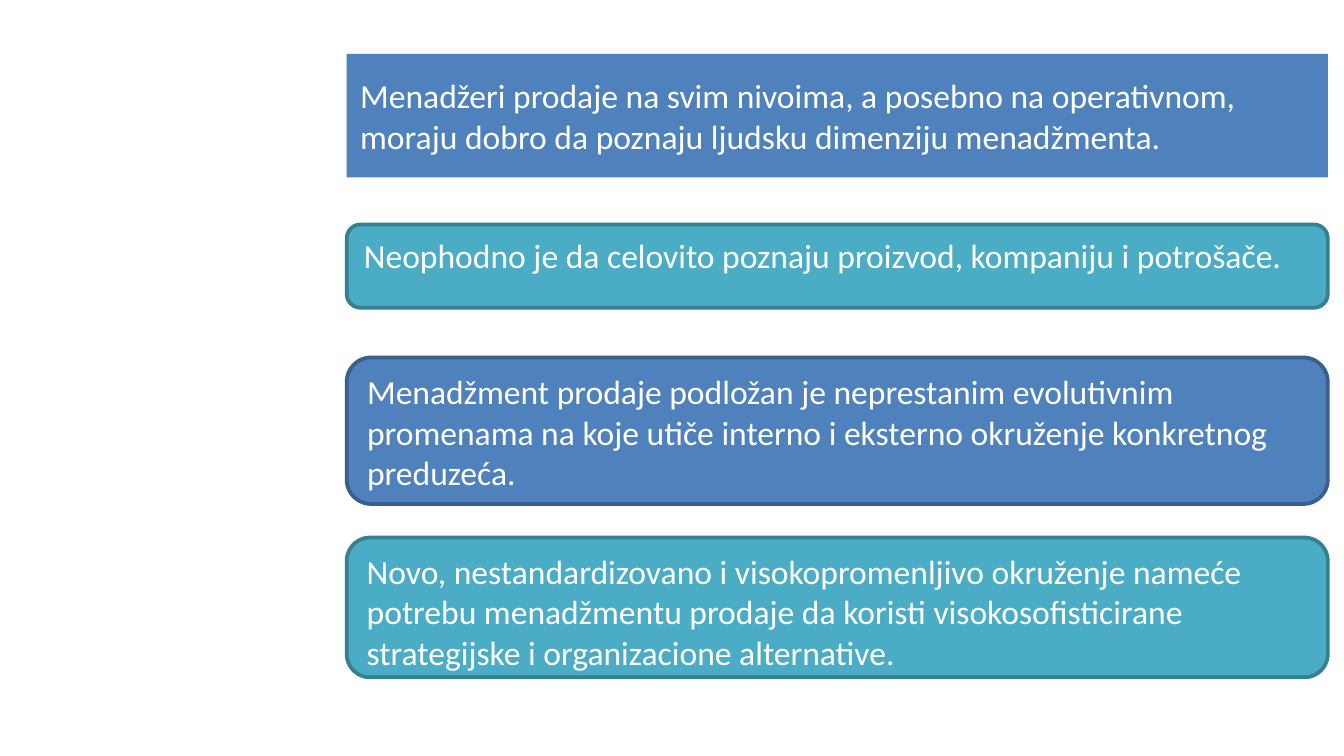
from pptx import Presentation
from pptx.dml.color import RGBColor
from pptx.enum.shapes import MSO_SHAPE
from pptx.enum.text import MSO_ANCHOR, MSO_AUTO_SIZE, PP_ALIGN
from pptx.util import Pt

PX = 4572
LEFT, WIDTH = 516, 1460
HUES = {
    "blue": "4F81BD",
    "navy": "3A5F8C",
    "teal": "4BACC6",
    "deep": "377F92",
    "white": "FFFFFF",
}
HEAD = ("Menadžeri prodaje na svim nivoima, a posebno na operativnom, "
        "moraju dobro da poznaju ljudsku dimenziju menadžmenta.")
CARDS = [
    (334, 124, "teal", "deep",
     "Neophodno je da celovito poznaju proizvod, kompaniju i potrošače."),
    (532, 218, "blue", "navy",
     "Menadžment prodaje podložan je neprestanim evolutivnim promenama "
     "na koje utiče interno i eksterno okruženje konkretnog preduzeća."),
    (800, 208, "teal", "deep",
     "Novo, nestandardizovano i visokopromenljivo okruženje nameće "
     "potrebu menadžmentu prodaje da koristi visokosofisticirane "
     "strategijske i organizacione alternative."),
]


def hue(name):
    return RGBColor.from_string(HUES[name])


def paint(shape, fill):
    shape.fill.solid()
    shape.fill.fore_color.rgb = hue(fill)


def write(shape, text, size=18, color="white", anchor=MSO_ANCHOR.TOP):
    frame = shape.text_frame
    frame.word_wrap = True
    frame.auto_size = MSO_AUTO_SIZE.NONE
    frame.vertical_anchor = anchor
    para = frame.paragraphs[0]
    para.alignment = PP_ALIGN.LEFT
    run = para.add_run()
    run.text = text
    run.font.name = "Calibri"
    run.font.size = Pt(size)
    run.font.color.rgb = hue(color)


def add_head(slide, top, height, text):
    title = slide.shapes.title
    title.left, title.top = LEFT * PX, top * PX
    title.width, title.height = WIDTH * PX, height * PX
    paint(title, "blue")
    write(title, text, anchor=MSO_ANCHOR.MIDDLE)


def add_card(slide, top, height, fill, edge, text):
    card = slide.shapes.add_shape(
        MSO_SHAPE.ROUNDED_RECTANGLE,
        LEFT * PX, top * PX, WIDTH * PX, height * PX)
    card.shadow.inherit = False
    paint(card, fill)
    card.line.color.rgb = hue(edge)
    card.line.width = Pt(2)
    write(card, text)


def main():
    deck = Presentation()
    deck.slide_width, deck.slide_height = 2000 * PX, 1125 * PX
    slide = deck.slides.add_slide(deck.slide_layouts[5])
    add_head(slide, 80, 184, HEAD)
    for card in CARDS:
        add_card(slide, *card)
    deck.save("out.pptx")


if __name__ == "__main__":
    main()
